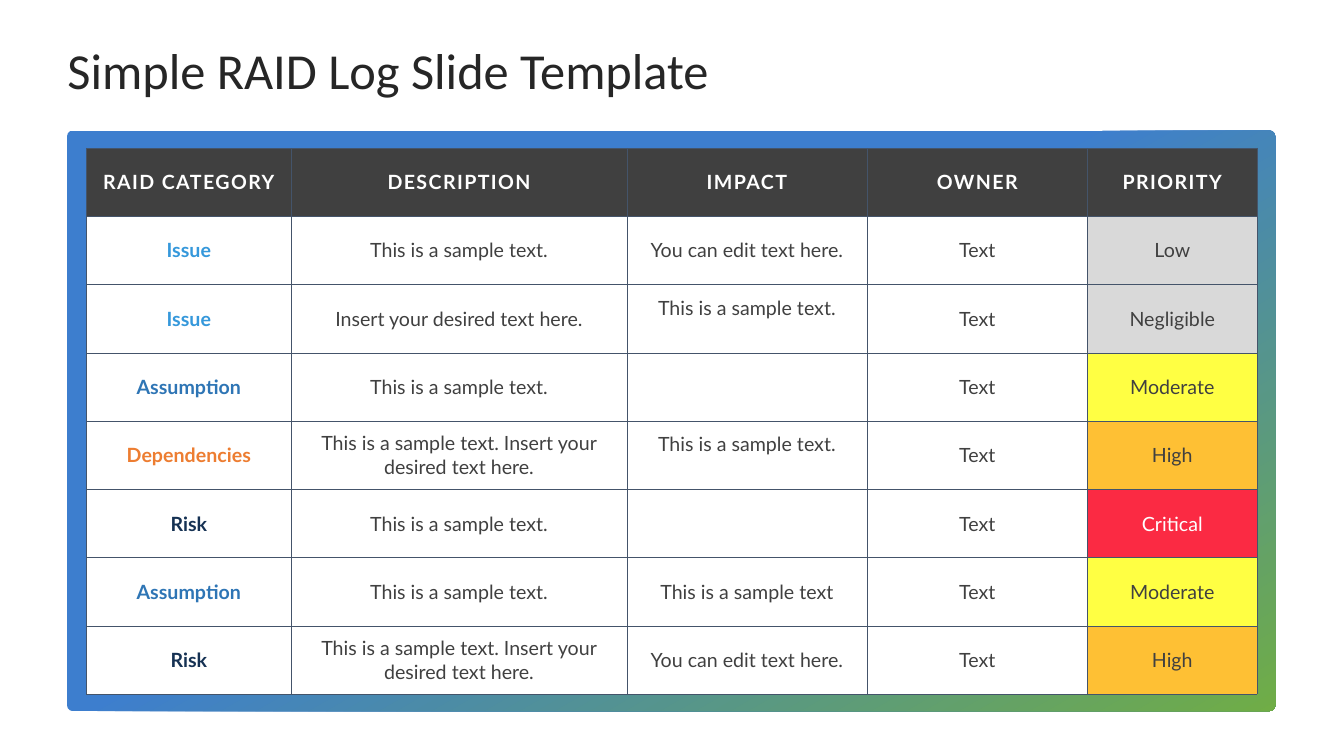
"""Build a RAID log slide with a framed, colour-coded table."""
from lxml import etree
from pptx import Presentation
from pptx import util as u
from pptx.dml.color import RGBColor
from pptx.enum import shapes, text
from pptx.oxml import ns

WHITE = RGBColor(0xFF, 0xFF, 0xFF)
INK = RGBColor(0x26, 0x26, 0x26)
CHARCOAL = RGBColor(0x40, 0x40, 0x40)
SLATE = RGBColor(0x44, 0x54, 0x6A)
BLUE = RGBColor(0x3D, 0x7E, 0xCE)
GREEN = RGBColor(0x70, 0xAD, 0x46)
SKY = RGBColor(0x35, 0x98, 0xDB)
OCEAN = RGBColor(0x2E, 0x75, 0xB5)
ORANGE = RGBColor(0xED, 0x7D, 0x31)
NAVY = RGBColor(0x15, 0x31, 0x53)
GREY = RGBColor(0xD9, 0xD9, 0xD9)
YELLOW = RGBColor(0xFF, 0xFF, 0x43)
AMBER = RGBColor(0xFE, 0xC0, 0x34)
RED = RGBColor(0xFB, 0x2A, 0x43)

CATEGORIES = {"Issue": SKY, "Assumption": OCEAN, "Dependencies": ORANGE, "Risk": NAVY}
PRIORITIES = {"Low": GREY, "Negligible": GREY, "Moderate": YELLOW, "High": AMBER, "Critical": RED}
HEADINGS = ("RAID CATEGORY", "DESCRIPTION", "IMPACT", "OWNER", "PRIORITY")
SAMPLE = "This is a sample text."
LONG = "This is a sample text. Insert your desired text here."
EDIT = "You can edit text here."
LOG = (
    ("Issue", SAMPLE, EDIT, "Text", "Low"),
    ("Issue", "Insert your desired text here.", SAMPLE, "Text", "Negligible"),
    ("Assumption", SAMPLE, "", "Text", "Moderate"),
    ("Dependencies", LONG, SAMPLE, "Text", "High"),
    ("Risk", SAMPLE, "", "Text", "Critical"),
    ("Assumption", SAMPLE, "This is a sample text", "Text", "Moderate"),
    ("Risk", LONG, EDIT, "Text", "High"),
)
COLUMN_WIDTHS = (5.16, 8.46, 6.05, 5.56, 4.27)
ROW_HEIGHT = 1.72
RAISED_MARGIN = 0.69


def apply(target, values):
    for name, value in values.items():
        setattr(target, name, value)


class RaidSlide:
    title_font = {"name": "Calibri", "size": u.Pt(36)}
    table_font = {"name": "Lato", "size": u.Pt(14)}

    def __init__(self, deck):
        self.page = deck.slides.add_slide(deck.slide_layouts[5])

    def add_words(self, para, words, font, color):
        span = para.add_run()
        span.text = words
        apply(span.font, font)
        span.font.color.rgb = color
        return span

    def title(self, words, left, top, width, height):
        box = self.page.shapes.title
        apply(box, {"left": u.Cm(left), "top": u.Cm(top),
                    "width": u.Cm(width), "height": u.Cm(height)})
        frame = box.text_frame
        apply(frame, {"margin_left": 0, "margin_right": 0, "margin_top": 0,
                      "margin_bottom": 0, "word_wrap": True,
                      "vertical_anchor": text.MSO_ANCHOR.MIDDLE})
        para = frame.paragraphs[0]
        para.alignment = text.PP_ALIGN.LEFT
        self.add_words(para, words, self.title_font, INK)

    def frame(self, left, top, width, height):
        panel = self.page.shapes.add_shape(
            shapes.MSO_SHAPE.ROUNDED_RECTANGLE,
            u.Cm(left), u.Cm(top), u.Cm(width), u.Cm(height))
        panel.adjustments[0] = 0.01
        panel.shadow.inherit = False
        panel.line.fill.background()
        panel.fill.gradient()
        panel.fill.gradient_angle = 300
        for stop, position, color in zip(panel.fill.gradient_stops, (0.46, 1), (BLUE, GREEN)):
            stop.position = position
            stop.color.rgb = color

    def borders(self, cell):
        props = cell._tc.get_or_add_tcPr()
        for side in ("lnL", "lnR", "lnT", "lnB"):
            line = etree.SubElement(props, ns.qn(f"a:{side}"), w=str(u.Pt(0.25)))
            fill = etree.SubElement(line, ns.qn("a:solidFill"))
            etree.SubElement(fill, ns.qn("a:srgbClr"), val=str(SLATE))

    def cell(self, cell, words, color, fill, bold=False, spacing=0):
        self.borders(cell)
        cell.fill.solid()
        cell.fill.fore_color.rgb = fill
        cell.vertical_anchor = text.MSO_ANCHOR.MIDDLE
        para = cell.text_frame.paragraphs[0]
        para.alignment = text.PP_ALIGN.CENTER
        if words:
            span = self.add_words(para, words, {**self.table_font, "bold": bold}, color)
            if spacing:
                span._r.get_or_add_rPr().set("spc", str(spacing))

    def table(self, left, top):
        grid = self.page.shapes.add_table(
            len(LOG) + 1, len(HEADINGS), u.Cm(left), u.Cm(top),
            u.Cm(sum(COLUMN_WIDTHS)), u.Cm(ROW_HEIGHT * (len(LOG) + 1))).table
        apply(grid, {"first_row": False, "horz_banding": False})
        for column, width in zip(grid.columns, COLUMN_WIDTHS):
            column.width = u.Cm(width)
        for row in grid.rows:
            row.height = u.Cm(ROW_HEIGHT)
        for index, heading in enumerate(HEADINGS):
            self.cell(grid.cell(0, index), heading, WHITE, CHARCOAL, True, 100)
        for number, entry in enumerate(LOG, 1):
            for index, words in enumerate(entry):
                color = WHITE if words == "Critical" else CATEGORIES.get(words, CHARCOAL)
                self.cell(grid.cell(number, index), words, color,
                          PRIORITIES.get(words, WHITE), words in CATEGORIES)
            if entry[2] == SAMPLE:
                grid.cell(number, 2).margin_bottom = u.Cm(RAISED_MARGIN)


def main():
    deck = Presentation()
    apply(deck, {"slide_width": u.Cm(33.87), "slide_height": u.Cm(19.05)})
    slide = RaidSlide(deck)
    slide.title("Simple RAID Log Slide Template", 1.7, 0.76, 30.48, 1.98)
    slide.frame(1.69, 3.29, 30.45, 14.63)
    slide.table(2.18, 3.73)
    deck.save("out.pptx")


if __name__ == "__main__":
    main()
